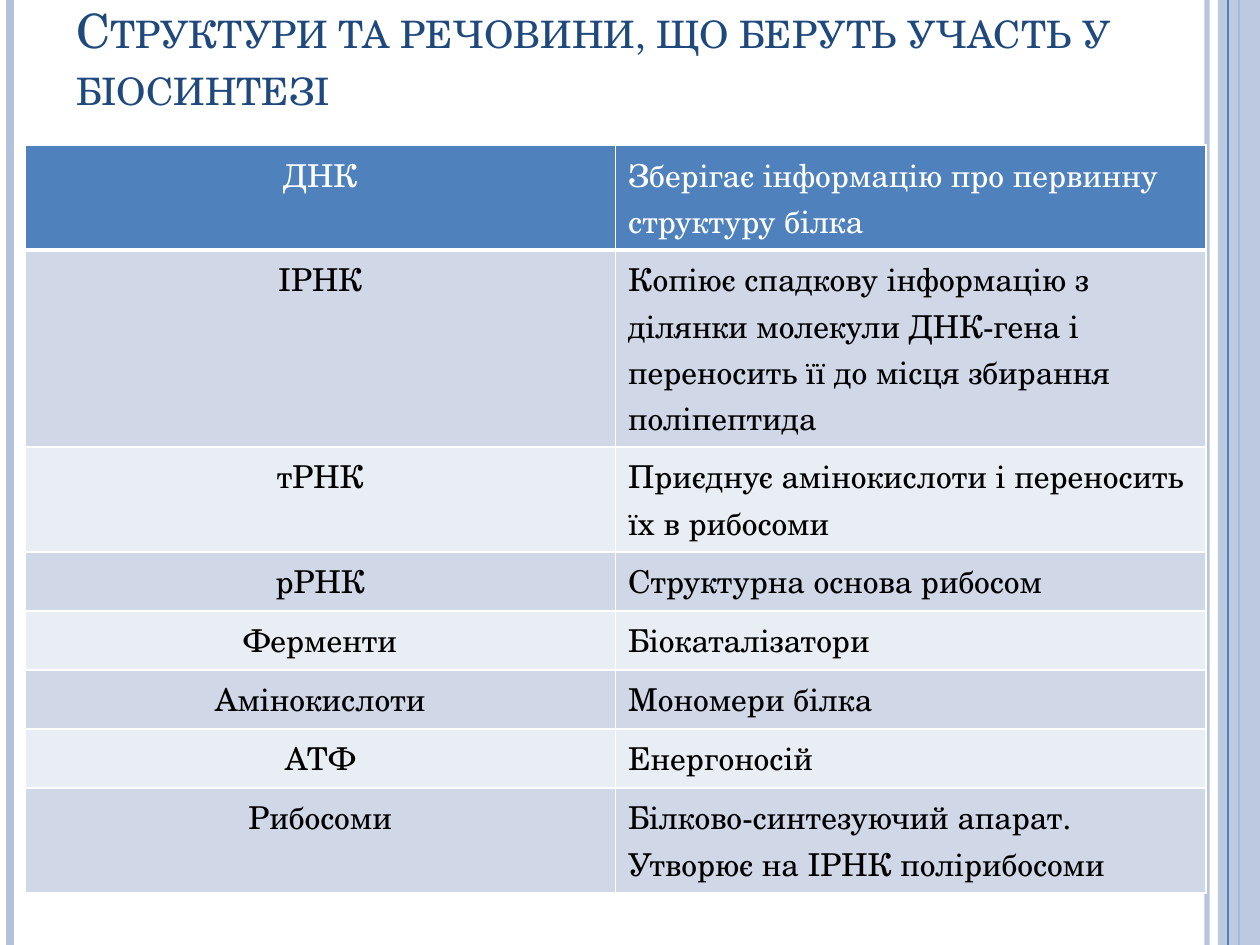
from lxml import etree
from pptx import Presentation, util as u
from pptx.dml.color import RGBColor
from pptx.enum import shapes, text
from pptx.oxml.ns import qn

SCALE = 914400 / 126
FONT = "TeX Gyre Schola"
COLORS = {"pale": "B3C1DB", "blue": "4F81BD", "navy": "1F497D", "white": "FFFFFF",
          "black": "000000", "band_dark": "D0D8E8", "band_light": "E9EDF4"}

ROWS = [
    ("ДНК", "Зберігає інформацію про первинну структуру білка", 105),
    ("ІРНК", "Копіює спадкову інформацію з ділянки молекули ДНК-гена і "
             "переносить її до місця збирання поліпептида", 197),
    ("тРНК", "Приєднує амінокислоти і переносить їх в рибосоми", 105),
    ("рРНК", "Структурна основа рибосом", 59),
    ("Ферменти", "Біокаталізатори", 59),
    ("Амінокислоти", "Мономери білка", 59),
    ("АТФ", "Енергоносій", 59),
    ("Рибосоми", "Білково-синтезуючий апарат. Утворює на ІРНК полірибосоми", 105),
]


def px(length):
    return u.Emu(round(length * SCALE))


def color(name):
    return RGBColor.from_string(COLORS[name])


def set_values(target, values):
    for name, value in values.items():
        setattr(target, name, value)


def set_alpha(fill_owner, percent):
    """Make the first solid colour inside the element partly transparent."""
    tone = next(fill_owner.iter(qn("a:srgbClr")))
    etree.SubElement(tone, qn("a:alpha"), val=str(percent * 1000))


def write(frame, words, size, tone, align=text.PP_ALIGN.LEFT):
    para = frame.paragraphs[0]
    para.alignment = align
    span = para.add_run()
    span.text = words
    set_values(span.font, {"name": FONT, "size": u.Pt(size), "bold": False})
    span.font.color.rgb = color(tone)
    return span


def add_stripe(page, x, height, width, tone, alpha=None):
    line = page.shapes.add_connector(shapes.MSO_CONNECTOR.STRAIGHT,
                                     px(x), 0, px(x), px(height))
    line.line.width = u.Pt(width)
    line.line.color.rgb = color(tone)
    properties = line._element.spPr
    if alpha:
        set_alpha(properties, alpha)
    etree.SubElement(properties, qn("a:effectLst"))


def add_side_bands(page, width, height):
    add_stripe(page, width - 53, height, 3, "pale", 93)
    add_stripe(page, 10, height, 4.5, "pale")
    add_stripe(page, width - 21, height, 1.5, "blue")
    band = page.shapes.add_shape(shapes.MSO_SHAPE.RECTANGLE,
                                 px(width - 42), 0, px(42), px(height))
    band.shadow.inherit = False
    band.fill.solid()
    band.fill.fore_color.rgb = color("pale")
    set_alpha(band._element.spPr, 87)
    band.line.fill.background()
    add_stripe(page, width - 32, height, 0.75, "blue")


def add_title(page, left, top, width, height):
    box = page.shapes.add_textbox(px(left), px(top), px(width), px(height))
    set_values(box.text_frame, {"word_wrap": True,
                                "vertical_anchor": text.MSO_ANCHOR.BOTTOM})
    span = write(box.text_frame,
                 "Структури та речовини, що беруть участь у біосинтезі", 27, "navy")
    span.font._element.set("cap", "small")


def add_borders(cell, bottom):
    properties = cell._tc.get_or_add_tcPr()
    for side, width in {"L": 1, "R": 1, "T": 1, "B": bottom}.items():
        edge = etree.SubElement(properties, qn(f"a:ln{side}"), w=str(u.Pt(width)))
        fill = etree.SubElement(edge, qn("a:solidFill"))
        etree.SubElement(fill, qn("a:srgbClr"), val=COLORS["white"])


def add_substance_table(page, left, top, width):
    height = sum(row[-1] for row in ROWS)
    table = page.shapes.add_table(len(ROWS), 2, px(left), px(top), px(width), px(height)).table
    for column in table.columns:
        column.width = px(width / 2)
    for index, (name, role, row_height) in enumerate(ROWS):
        table.rows[index].height = px(row_height)
        header = index == 0
        band = "blue" if header else "band_dark" if index % 2 else "band_light"
        for cell, words, align in zip(table.rows[index].cells, (name, role),
                                      (text.PP_ALIGN.CENTER, text.PP_ALIGN.LEFT)):
            add_borders(cell, 3 if header else 1)
            cell.fill.solid()
            cell.fill.fore_color.rgb = color(band)
            write(cell.text_frame, words, 18, "white" if header else "black", align)


def main():
    width, height = 1260, 945
    deck = Presentation()
    set_values(deck, {"slide_width": px(width), "slide_height": px(height)})
    page = deck.slides.add_slide(deck.slide_layouts[6])
    add_side_bands(page, width, height)
    add_title(page, 64, 0, 1131, 121)
    add_substance_table(page, 25, 145, 1181)
    deck.save("out.pptx")


if __name__ == "__main__":
    main()
